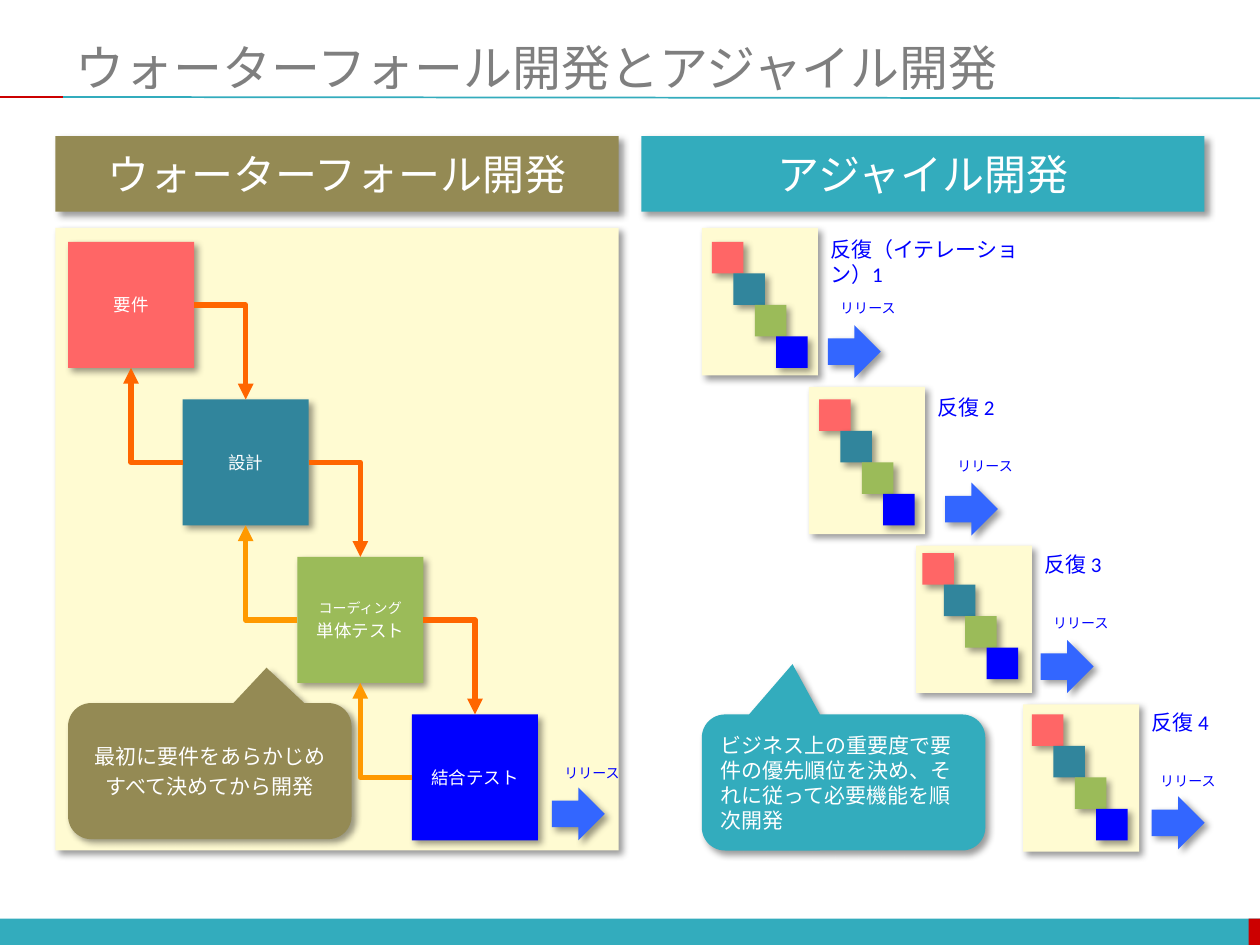
import pptx
import pptx.util
import pptx.oxml
from pptx.dml.color import RGBColor
from pptx.enum.shapes import MSO_CONNECTOR, MSO_SHAPE
from pptx.enum.text import MSO_ANCHOR, PP_ALIGN
from pptx.oxml.ns import nsdecls, qn
from pptx.util import Inches, Pt

TEAL = RGBColor(0x33, 0xAC, 0xBD)
OLIVE = RGBColor(0x94, 0x8A, 0x54)
CREAM = RGBColor(0xFF, 0xFB, 0xD2)
RED = RGBColor(0xCC, 0x00, 0x00)
PINK = RGBColor(0xFF, 0x66, 0x66)
DEEP_TEAL = RGBColor(0x31, 0x85, 0x9C)
GREEN = RGBColor(0x9B, 0xBB, 0x59)
BLUE = RGBColor(0x00, 0x00, 0xFF)
ARROW_BLUE = RGBColor(0x33, 0x66, 0xFF)
ORANGE = RGBColor(0xFF, 0x66, 0x00)
AMBER = RGBColor(0xFF, 0x99, 0x00)
GRAY = RGBColor(0x7F, 0x7F, 0x7F)
WHITE = RGBColor(0xFF, 0xFF, 0xFF)
CJK = "Noto Sans CJK JP"

TITLE = "ウォーターフォール開発とアジャイル開発"
HEADERS = [("ウォーターフォール開発", 0.44, OLIVE), ("アジャイル開発", 5.09, TEAL)]
PHASES = [
    ([("要件", 10)], PINK, "Arial"),
    ([("設計", 10)], DEEP_TEAL, "Calibri"),
    ([("コーディング", 8), ("単体テスト", 10)], GREEN, "Calibri"),
    ([("結合テスト", 10)], BLUE, "Arial"),
]
BACK_COLORS = [ORANGE, AMBER, AMBER]
CALLOUTS = [
    (["最初に要件をあらかじめ", "すべて決めてから開発"],
     0.54, 5.58, OLIVE, (0.2, -0.76, 0.17), PP_ALIGN.CENTER),
    (["ビジネス上の重要度で要件の優先順位を決め、それに従って必要機能を順次開発"],
     5.57, 5.67, TEAL, (-0.18, -0.87, 0.17), PP_ALIGN.LEFT),
]
ITERATIONS = [
    ("反復（イテレーション）1", 1.79, (5.65, 1.92), (6.57, 2.58), (6.57, 2.33)),
    ("反復 2", 0.66, (6.5, 3.17), (7.5, 3.83), (7.5, 3.58)),
    ("反復 3", 0.66, (7.32, 4.39), (8.26, 5.08), (8.26, 4.83)),
    ("反復 4", 0.66, (8.19, 5.67), (9.14, 6.32), (9.11, 6.08)),
]

prs = pptx.Presentation()
prs.slide_width, prs.slide_height = Inches(10), Inches(7.5)
s = prs.slides.add_slide(prs.slide_layouts[6])


def write(sp, lines, color, font="Calibri", align=PP_ALIGN.LEFT, anchor=MSO_ANCHOR.MIDDLE):
    tf = sp.text_frame
    tf.word_wrap = True
    tf.vertical_anchor = anchor
    for i, (text, size) in enumerate(lines):
        p = tf.add_paragraph() if i else tf.paragraphs[0]
        p.text = text
        p.alignment = align
        if i:
            p.space_before = Pt(size * 0.2)
        p.font.size = Pt(size)
        p.font.name = font
        p.font.color.rgb = color
        rpr = p._p.pPr.find(qn("a:defRPr"))
        rpr.append(pptx.oxml.parse_xml(f'<a:ea {nsdecls("a")} typeface="{CJK}"/>'))


def add_block(kind, x, y, w, h, color, adjust=(), shadow=True):
    sp = s.shapes.add_shape(kind, Inches(x), Inches(y), Inches(w), Inches(h))
    sp.fill.solid()
    sp.fill.fore_color.rgb = color
    sp.line.fill.background()
    for i, value in enumerate(adjust):
        sp.adjustments[i] = value
    sp.shadow.inherit = False
    if shadow:
        sp._element.spPr.find(qn("a:effectLst")).append(pptx.oxml.parse_xml(
            f'<a:outerShdw {nsdecls("a")} blurRad="{Pt(4)}" dist="{Pt(3)}" dir="2700000" '
            'algn="tl" rotWithShape="0"><a:srgbClr val="000000"><a:alpha val="40000"/>'
            '</a:srgbClr></a:outerShdw>'))
    return sp


def add_card(x, y, w, h, color):
    return add_block(MSO_SHAPE.ROUNDED_RECTANGLE, x, y, w, h, color, (0,))


def add_label(text, x, y, w, h, size, color, font="Calibri", anchor=MSO_ANCHOR.TOP):
    sp = s.shapes.add_textbox(Inches(x), Inches(y), Inches(w), Inches(h))
    write(sp, [(text, size)], color, font, anchor=anchor)


def add_line(kind, x1, y1, x2, y2, color, width):
    c = s.shapes.add_connector(kind, Inches(x1), Inches(y1), Inches(x2), Inches(y2))
    c.line.color.rgb = color
    c.line.width = Pt(width)
    c._element.spPr.append(pptx.oxml.parse_xml(f'<a:effectLst {nsdecls("a")}/>'))
    return c


def add_flow(start, start_side, end, end_side, color):
    c = add_line(MSO_CONNECTOR.ELBOW, 0, 0, 1, 1, color, 3)
    c.begin_connect(start, start_side)
    c.end_connect(end, end_side)
    c._element.spPr.find(qn("a:prstGeom")).set("prst", "bentConnector2")
    c.line._get_or_add_ln().append(
        pptx.oxml.parse_xml(f'<a:tailEnd {nsdecls("a")} type="triangle"/>'))


def add_release(arrow, label):
    add_block(MSO_SHAPE.RIGHT_ARROW, *arrow, 0.42, 0.42, ARROW_BLUE)
    add_label("リリース", *label, 0.65, 0.24, 8, BLUE)


add_block(MSO_SHAPE.RECTANGLE, 0, 7.29, 10, 0.22, TEAL, shadow=False)
add_block(MSO_SHAPE.RECTANGLE, 9.91, 7.29, 0.1, 0.22, RED, shadow=False)
add_line(MSO_CONNECTOR.STRAIGHT, 0.5, 0.77, 10, 0.78, TEAL, 1)
add_line(MSO_CONNECTOR.STRAIGHT, 0, 0.77, 0.5, 0.77, RED, 1)
add_label(TITLE, 0.5, 0.3, 9.5, 0.46, 28, GRAY, CJK, MSO_ANCHOR.MIDDLE)

for text, x, color in HEADERS:
    sp = add_block(MSO_SHAPE.RECTANGLE, x, 1.08, 4.47, 0.6, color)
    write(sp, [(text, 24)], WHITE, align=PP_ALIGN.CENTER)

add_card(0.44, 1.81, 4.47, 4.94, CREAM)
for texts, x, y, color, adjust, align in CALLOUTS:
    sp = add_block(MSO_SHAPE.ROUNDED_RECTANGULAR_CALLOUT, x, y, 2.25, 1.08, color, adjust)
    write(sp, [(text, 12) for text in texts], WHITE, align=align)

boxes = []
for i, (lines, color, font) in enumerate(PHASES):
    sp = add_card(0.54 + 0.91 * i, 1.92 + 1.25 * i, 1, 1, color)
    write(sp, lines, WHITE, font, PP_ALIGN.CENTER)
    boxes.append(sp)
for upper, lower, back_color in zip(boxes, boxes[1:], BACK_COLORS):
    add_flow(upper, 3, lower, 0, ORANGE)
    add_flow(lower, 1, upper, 2, back_color)
add_release((4.38, 6.25), (4.38, 6.02))

for i, (name, width, (x, y), arrow, label) in enumerate(ITERATIONS):
    add_card(5.57 + 0.85 * i, 1.81 + 1.26 * i, 0.92, 1.17, CREAM)
    for j, (_, color, _) in enumerate(PHASES):
        add_card(x + 0.17 * j, y + 0.25 * j, 0.25, 0.25, color)
    add_label(name, 6.49 + 0.85 * i, 1.83 + 1.25 * i, width, 0.3, 12, BLUE)
    add_release(arrow, label)

prs.save("out.pptx")
